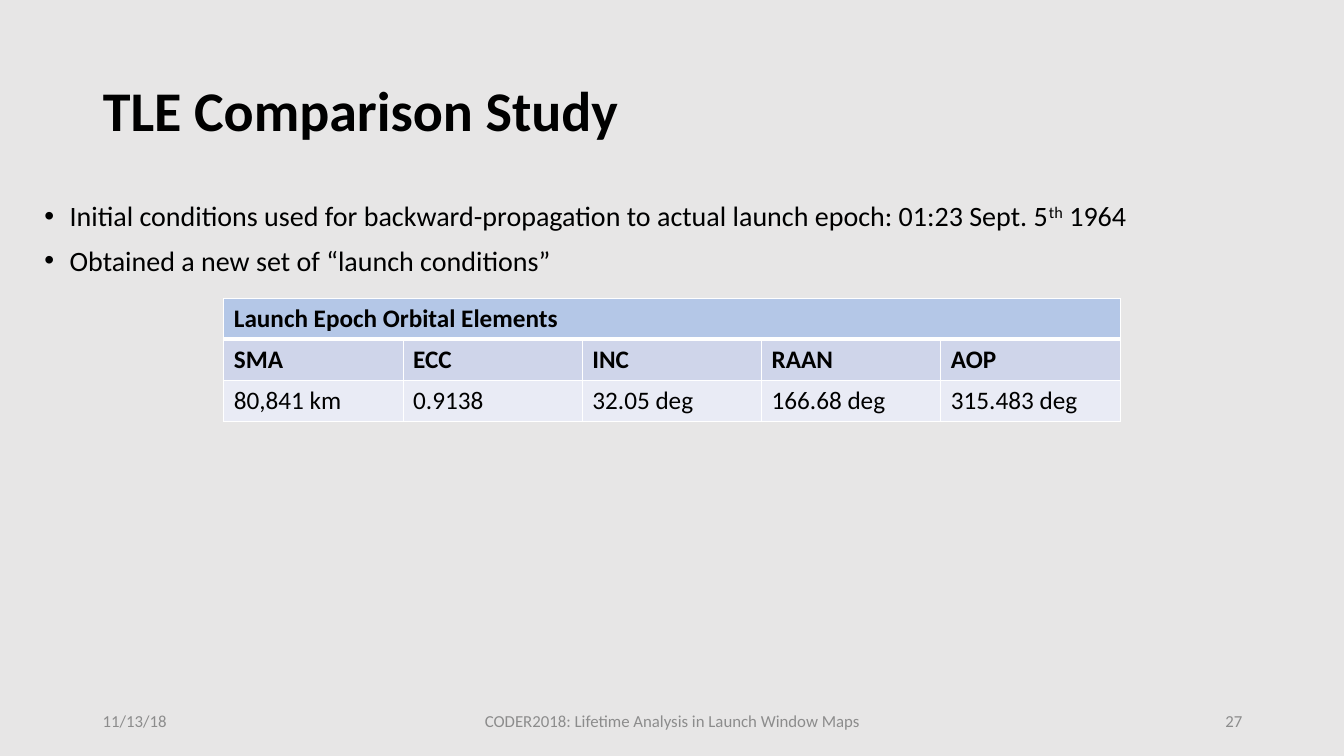
from lxml import etree
from pptx import Presentation
from pptx.dml.color import RGBColor
from pptx.enum.text import MSO_ANCHOR, MSO_AUTO_SIZE, PP_ALIGN
from pptx.oxml import parse_xml
from pptx.oxml.ns import nsdecls, qn
from pptx.util import Inches, Pt

LEFT, CENTER, RIGHT = PP_ALIGN.LEFT, PP_ALIGN.CENTER, PP_ALIGN.RIGHT
MIDDLE, TOP = MSO_ANCHOR.MIDDLE, MSO_ANCHOR.TOP
FIXED_SIZE = MSO_AUTO_SIZE.NONE

BACKGROUND = RGBColor(0xE7, 0xE6, 0xE6)
BLACK = RGBColor(0x00, 0x00, 0x00)
GRAY = RGBColor(0x8C, 0x8C, 0x8C)
HEADER_FILL = RGBColor(0xB4, 0xC7, 0xE7)
LABEL_FILL = RGBColor(0xCF, 0xD5, 0xEA)
VALUE_FILL = RGBColor(0xE9, 0xEB, 0xF5)
FONT = "Calibri"
MARGIN = 0.92


def place(shape, left, top, width, height, anchor):
    shape.left, shape.top = Inches(left), Inches(top)
    shape.width, shape.height = Inches(width), Inches(height)
    shape.text_frame.word_wrap = True
    shape.text_frame.auto_size = FIXED_SIZE
    shape.text_frame.vertical_anchor = anchor


def style(paragraph, size, color=BLACK, bold=False, alignment=LEFT):
    paragraph.alignment = alignment
    font = paragraph.font
    font.name, font.size, font.bold = FONT, Pt(size), bold
    font.color.rgb = color


presentation = Presentation()
presentation.slide_width, presentation.slide_height = Inches(13.33), Inches(7.5)
slide = presentation.slides.add_slide(presentation.slide_layouts[1])
slide.background.fill.solid()
slide.background.fill.fore_color.rgb = BACKGROUND

# Title
title = slide.shapes.title
place(title, MARGIN, 0.4, 11.5, 1.45, MIDDLE)
title.text_frame.text = "TLE Comparison Study"
title.text_frame.paragraphs[0].line_spacing = 0.9
style(title.text_frame.paragraphs[0], 40, bold=True)

# Bullets: each is a list of (text, is superscript) runs
bullets = [
    [("Initial conditions used for backward-propagation to actual launch epoch: "
      "01:23 Sept. 5", False), ("th", True), (" 1964", False)],
    [("Obtained a new set of “launch conditions”", False)],
]
body = slide.placeholders[1]
place(body, 0.34, 1.96, 12.82, 4.76, TOP)
for index, runs in enumerate(bullets):
    frame = body.text_frame
    paragraph = frame.add_paragraph() if index else frame.paragraphs[0]
    paragraph.line_spacing = 0.9
    paragraph.space_before = Pt(10 if index else 0)
    properties = paragraph._p.get_or_add_pPr()
    properties.set("marL", str(Inches(0.25)))
    properties.set("indent", str(-Inches(0.25)))
    etree.SubElement(properties, qn("a:buFont"), typeface="Arial")
    etree.SubElement(properties, qn("a:buChar"), char="•")
    style(paragraph, 20)
    for text, superscript in runs:
        run = paragraph.add_run()
        run.text = text
        if superscript:
            run.font._element.set("baseline", "30000")

# Orbital elements table: fill, bold, bottom border in points, texts
table_rows = [
    (HEADER_FILL, True, 3, ["Launch Epoch Orbital Elements", "", "", "", ""]),
    (LABEL_FILL, True, 1, ["SMA", "ECC", "INC", "RAAN", "AOP"]),
    (VALUE_FILL, False, 1,
     ["80,841 km", "0.9138", "32.05 deg", "166.68 deg", "315.483 deg"]),
]
table = slide.shapes.add_table(
    3, 5, Inches(2.22), Inches(2.96), Inches(8.89), Inches(1.22)).table
table.cell(0, 0).merge(table.cell(0, 4))
for row_index, (fill, bold, bottom, texts) in enumerate(table_rows):
    top = table_rows[row_index - 1][2] if row_index else 1
    for column_index, text in enumerate(texts):
        cell = table.cell(row_index, column_index)
        cell_properties = cell._tc.get_or_add_tcPr()
        for side, width in (("L", 1), ("R", 1), ("T", top), ("B", bottom)):
            cell_properties.append(parse_xml(
                f'<a:ln{side} {nsdecls("a")} w="{Pt(width)}"><a:solidFill>'
                f'<a:srgbClr val="FFFFFF"/></a:solidFill></a:ln{side}>'))
        cell.fill.solid()
        cell.fill.fore_color.rgb = fill
        if text:
            cell.text = text
        style(cell.text_frame.paragraphs[0], 18, bold=bold)

# Footer
footer = [
    (MARGIN, 3, LEFT, "11/13/18"),
    (4.42, 4.5, CENTER, "CODER2018: Lifetime Analysis in Launch Window Maps"),
    (9.42, 3, RIGHT, "27"),
]
for left, width, alignment, text in footer:
    box = slide.shapes.add_textbox(0, 0, 0, 0)
    place(box, left, 6.95, width, 0.4, MIDDLE)
    box.text_frame.text = text
    style(box.text_frame.paragraphs[0], 12, GRAY, alignment=alignment)

presentation.save("out.pptx")
